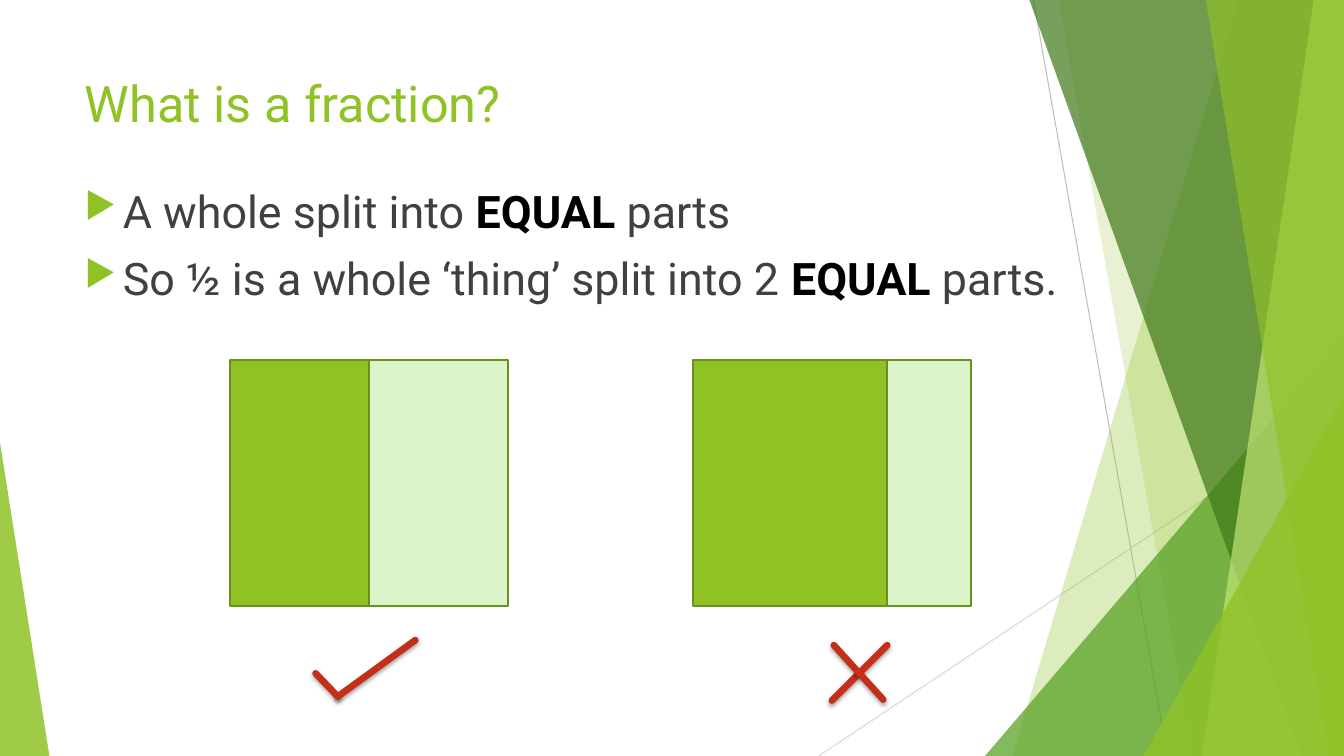
from lxml import etree
from pptx import Presentation
from pptx import util as u
from pptx.dml.color import RGBColor
from pptx.enum import shapes, text
from pptx.oxml.ns import qn

WIDTH, HEIGHT = 13.33, 7.5
FONT = "Roboto"
COLOURS = {
    "lime": "90C226", "green": "54A021", "forest": "3F7819", "pale": "C0E474",
    "mint": "DBF4CA", "outline": "6B901C", "red": "C42F1A", "black": "000000",
    "body": "404040", "grey": "BFBFBF", "light grey": "D9D9D9",
}


def colour(name):
    return RGBColor.from_string(COLOURS[name])


def add_xml(parent, tag, **attributes):
    values = {key: str(value) for key, value in attributes.items()}
    return etree.SubElement(parent, qn(tag), values)


class SlideBuilder:
    def __init__(self, presentation):
        self.slide = presentation.slides.add_slide(presentation.slide_layouts[5])
        self.shapes = self.slide.shapes

    def paint(self, shape, fill, opacity=100, line=None):
        shape.shadow.inherit = False
        shape.fill.solid()
        shape.fill.fore_color.rgb = colour(fill)
        if opacity < 100:
            fill_colour = shape._element.spPr.find(qn("a:solidFill")).find(qn("a:srgbClr"))
            add_xml(fill_colour, "a:alpha", val=opacity * 1000)
        if line:
            shape.line.color.rgb = colour(line)
            shape.line.width = u.Pt(1.5)
        else:
            shape.line.fill.background()

    def slab(self, top_x, bottom_x, fill, opacity):
        """Full-height band from a slanted edge to the right side."""
        builder = self.shapes.build_freeform(u.Inches(top_x), 0)
        corners = [(WIDTH, 0), (WIDTH, HEIGHT), (bottom_x, HEIGHT)]
        builder.add_line_segments([(u.Inches(x), u.Inches(y)) for x, y in corners])
        self.paint(builder.convert_to_shape(), fill, opacity)

    def corner(self, left, top, width, apex, fill, opacity):
        """Triangle standing on the bottom edge."""
        shape = self.shapes.add_shape(
            shapes.MSO_SHAPE.ISOSCELES_TRIANGLE, u.Inches(left), u.Inches(top),
            u.Inches(width), u.Inches(HEIGHT - top))
        shape.adjustments[0] = apex
        self.paint(shape, fill, opacity)

    def block(self, left, width, fill):
        shape = self.shapes.add_shape(
            shapes.MSO_SHAPE.RECTANGLE, u.Inches(left), u.Inches(3.57),
            u.Inches(width), u.Inches(2.44))
        self.paint(shape, fill, line="outline")

    def line(self, start, end, line_colour, width=0.75):
        connector = self.shapes.add_connector(
            shapes.MSO_CONNECTOR.STRAIGHT, *map(u.Inches, start + end))
        connector.line.color.rgb = colour(line_colour)
        connector.line.width = u.Pt(width)
        return connector, add_xml(connector._element.spPr, "a:effectLst")

    def stroke(self, start, end):
        """Thick red pen stroke with a soft shadow."""
        connector, effects = self.line(start, end, "red", 4.75)
        connector._element.spPr.find(qn("a:ln")).set("cap", "rnd")
        shadow = add_xml(effects, "a:outerShdw", blurRad=u.Pt(3), dist=u.Pt(2),
                         dir=90 * 60000, rotWithShape=0)
        shadow_colour = add_xml(shadow, "a:srgbClr", val=COLOURS["black"])
        add_xml(shadow_colour, "a:alpha", val=35000)

    def title(self, wording):
        title = self.shapes.title
        title.left, title.top = u.Inches(0.74), u.Inches(0.67)
        title.width, title.height = u.Inches(9.4), u.Inches(1.44)
        frame = title.text_frame
        frame.text = wording
        frame.vertical_anchor = text.MSO_ANCHOR.TOP
        paragraph = frame.paragraphs[0]
        paragraph.alignment = text.PP_ALIGN.LEFT
        paragraph.font.name, paragraph.font.size = FONT, u.Pt(36)
        paragraph.font.color.rgb = colour("lime")

    def bullets(self, items):
        """Each item is (before, emphasised word, after)."""
        box = self.shapes.add_textbox(
            u.Inches(0.74), u.Inches(1.77), u.Inches(10.31), u.Inches(4.24))
        frame = box.text_frame
        frame.word_wrap = True
        for index, pieces in enumerate(items):
            paragraph = frame.add_paragraph() if index else frame.paragraphs[0]
            if index:
                paragraph.space_before = u.Pt(10)
            properties = paragraph._p.get_or_add_pPr()
            properties.set("marL", str(u.Inches(0.38)))
            properties.set("indent", str(-u.Inches(0.38)))
            bullet_colour = add_xml(properties, "a:buClr")
            add_xml(bullet_colour, "a:srgbClr", val=COLOURS["lime"])
            add_xml(properties, "a:buSzPct", val=80000)
            add_xml(properties, "a:buChar", char="▶")
            paragraph.font.name, paragraph.font.size = FONT, u.Pt(32)
            for position, wording in enumerate(pieces):
                run = paragraph.add_run()
                run.text = wording
                run.font.bold = position == 1
                run.font.color.rgb = colour("black" if position == 1 else "body")


def main():
    presentation = Presentation()
    presentation.slide_width = u.Inches(WIDTH)
    presentation.slide_height = u.Inches(HEIGHT)
    slide = SlideBuilder(presentation)

    # Faceted backdrop
    slide.line((10.25, 0), (11.58, HEIGHT), "grey")
    slide.line((WIDTH, 4.03), (8.12, HEIGHT), "light grey")
    slide.slab(12.28, 10.04, "lime", 30)
    slide.slab(10.5, 11.83, "lime", 20)
    slide.corner(9.77, 3.33, 3.56, 1, "green", 72)
    slide.slab(10.21, 12.91, "forest", 70)
    slide.slab(13.03, 11.92, "pale", 70)
    slide.slab(11.96, 13.18, "lime", 65)
    slide.corner(11.34, 3.93, 1.99, 1, "lime", 80)
    slide.corner(0, 4.39, 0.49, 0, "lime", 85)

    # Wording
    slide.title("What is a fraction?")
    slide.bullets([
        ("A whole split into ", "EQUAL", " parts"),
        ("So ½ is a whole ‘thing’ split into 2 ", "EQUAL", " parts."),
    ])

    # Equal and unequal splits
    half = 1.38
    for left, shaded in ((2.28, half), (6.87, 1.93)):
        slide.block(left + half, half, "mint")
        slide.block(left, shaded, "lime")

    # Tick and cross
    slide.stroke((3.13, 6.68), (3.35, 6.91))
    slide.stroke((3.35, 6.91), (4.12, 6.35))
    slide.stroke((8.25, 6.95), (8.8, 6.4))
    slide.stroke((8.76, 6.94), (8.27, 6.4))

    presentation.save("out.pptx")


if __name__ == "__main__":
    main()
